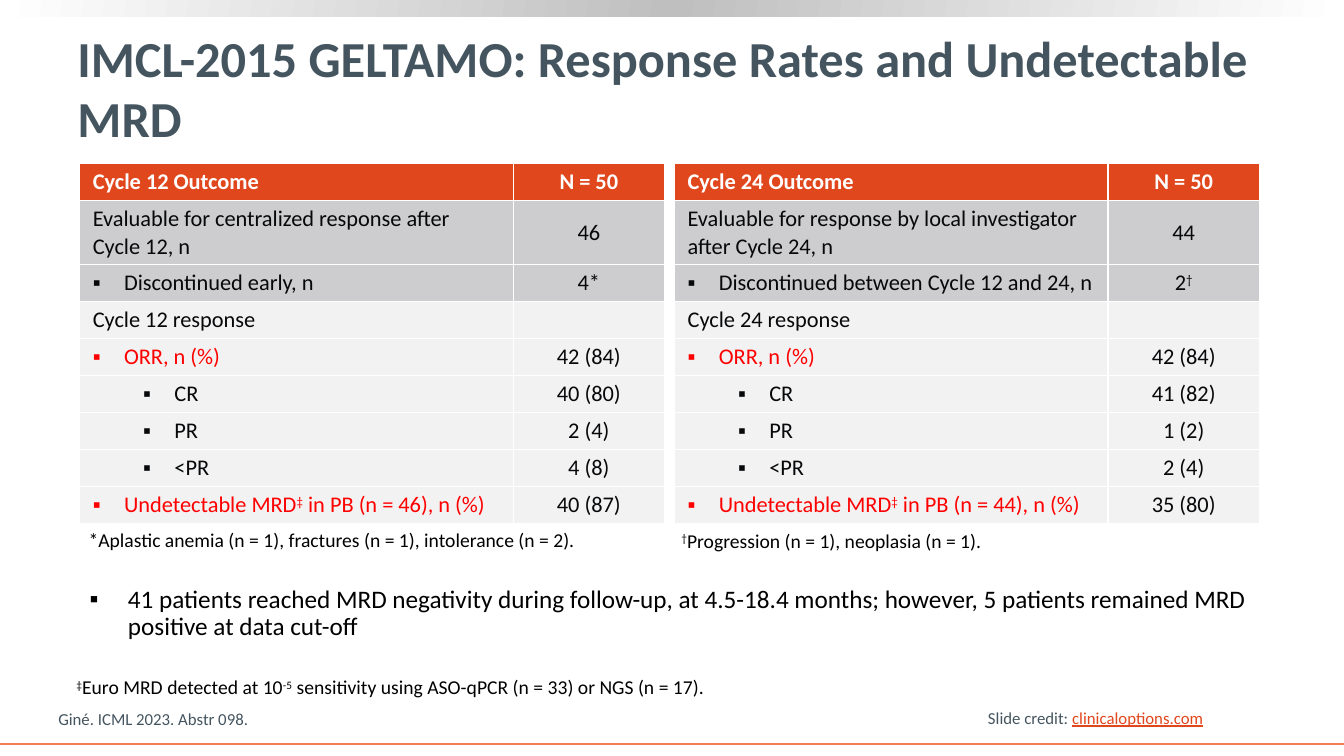
from lxml import etree
from pptx import Presentation, util as u
from pptx.dml import color
from pptx.enum import shapes, text
from pptx.oxml import ns

INK, SLATE, RED, ORANGE = "07080A", "455560", "FF0000", "E1471D"
DARK, LIGHT = "CDCDCF", "F2F2F2"


def rgb(code):
    return color.RGBColor.from_string(code)


def put(item, values):
    for name, value in values.items():
        setattr(item, name, value)


def node(parent, tag, **attrs):
    return etree.SubElement(parent, ns.qn(tag), attrs)


class Deck:
    font = "Calibri"

    def __init__(self, wide, high):
        self.show = Presentation()
        put(self.show, {"slide_width": u.Inches(wide), "slide_height": u.Inches(high)})
        self.page = self.show.slides.add_slide(self.show.slide_layouts[6])
        self.items = self.page.shapes

    def across(self, share):
        return int(self.show.slide_width * share / 100)

    def down(self, share):
        return int(self.show.slide_height * share / 100)

    def area(self, x, y, w, h):
        return self.across(x), self.down(y), self.across(w), self.down(h)

    def fill_in(self, para, words, size, ink, bold=False, line=False):
        for i, part in enumerate(words.split("^")):
            if not part:
                continue
            run = para.add_run()
            run.text = part
            put(run.font, {"name": self.font, "size": u.Pt(size),
                           "bold": bold, "underline": line})
            run.font.color.rgb = rgb(ink)
            if i % 2:
                run.font._element.set("baseline", "30000")

    def bullet(self, para, left, hang):
        props = para._p.get_or_add_pPr()
        props.set("marL", str(u.Inches(left)))
        props.set("indent", str(-u.Inches(hang)))
        node(props, "a:buFont", typeface="Arial")
        node(props, "a:buChar", char="▪")

    def label(self, place, words, size, ink, bold=False, wrap=True,
              anchor=text.MSO_ANCHOR.TOP):
        frame = self.items.add_textbox(*self.area(*place)).text_frame
        put(frame, {"word_wrap": wrap, "vertical_anchor": anchor})
        para = frame.paragraphs[0]
        self.fill_in(para, words, size, ink, bold)
        return para

    def strip(self, place, stops, angle):
        bar = self.items.add_shape(shapes.MSO_SHAPE.RECTANGLE, *self.area(*place))
        bar.shadow.inherit = False
        bar.line.fill.background()
        bar.fill.gradient()
        grad = bar._element.spPr.find(ns.qn("a:gradFill"))
        for child in list(grad):
            grad.remove(child)
        group = node(grad, "a:gsLst")
        for spot, code in stops:
            stop = node(group, "a:gs", pos=str(spot * 1000))
            node(stop, "a:srgbClr", val=code)
        node(grad, "a:lin", ang=str(angle * 60000), scaled="0")

    def rule(self, y, ink, width):
        line = self.items.add_connector(
            shapes.MSO_CONNECTOR.STRAIGHT, 0, self.down(y), self.across(100), self.down(y))
        line.line.color.rgb = rgb(ink)
        line.line.width = u.Pt(width)
        node(line._element.spPr, "a:effectLst")

    def cell(self, cell, words, fill, ink, size=16, bold=False, level=0, mid=False):
        cell.fill.solid()
        cell.fill.fore_color.rgb = rgb(fill)
        put(cell, {"margin_left": u.Inches(0.13), "margin_right": u.Inches(0.13),
                   "margin_top": u.Inches(0.05), "margin_bottom": u.Inches(0.05),
                   "vertical_anchor": text.MSO_ANCHOR.MIDDLE if mid or bold
                   else text.MSO_ANCHOR.TOP})
        para = cell.text_frame.paragraphs[0]
        if mid:
            para.alignment = text.PP_ALIGN.CENTER
        if level:
            self.bullet(para, 0.31 + 0.5 * (level - 1), 0.31)
        if words:
            self.fill_in(para, words, size, ink, bold)
        else:
            node(para._p, "a:endParaRPr", sz=str(size * 100))

    def table(self, x, y, rows, cols, high, tall):
        place = self.area(x, y, sum(cols), high * (len(rows) - 1) + tall)
        grid = self.items.add_table(len(rows), len(cols), *place).table
        put(grid, {"first_row": False, "horz_banding": False})
        for col, share in zip(grid.columns, cols):
            col.width = self.across(share)
        for r, (name, value, level) in enumerate(rows):
            grid.rows[r].height = self.down(tall if r == 1 else high)
            head = r == 0
            fill = ORANGE if head else DARK if r < 3 else LIGHT
            ink = "FFFFFF" if head else INK
            tone = RED if r > 3 and level == 1 else ink
            self.cell(grid.cell(r, 0), name, fill, tone, bold=head, level=level)
            self.cell(grid.cell(r, 1), value, fill, ink, bold=head, mid=True)


def rows(cycle, first, gone, base, counts):
    seen, left, orr, full, part, less, clear = counts
    return [
        (f"Cycle {cycle} Outcome", "N = 50", 0),
        (first, seen, 0),
        (gone, left, 1),
        (f"Cycle {cycle} response", "", 0),
        ("ORR, n (%)", orr, 1),
        ("CR", full, 2),
        ("PR", part, 2),
        ("<PR", less, 2),
        (f"Undetectable MRD^‡^ in PB (n = {base}), n (%)", clear, 1),
    ]


def main():
    deck = Deck(13.33, 7.5)
    deck.strip((0, 0, 100, 2.13), [(0, "FFFFFF"), (50, "BFBFBF"), (100, "FFFFFF")], 190)
    deck.rule(98.4, "F47D55", 1.5)
    deck.label((5.03, 3.47, 89.2, 16.13),
               "IMCL-2015 GELTAMO: Response Rates and Undetectable MRD",
               36, SLATE, bold=True, anchor=text.MSO_ANCHOR.MIDDLE)

    early = rows(12, "Evaluable for centralized response after Cycle 12, n",
                 "Discontinued early, n", 46,
                 ["46", "4*", "42 (84)", "40 (80)", "2 (4)", "4 (8)", "40 (87)"])
    late = rows(24, "Evaluable for response by local investigator after Cycle 24, n",
                "Discontinued between Cycle 12 and 24, n", 44,
                ["44", "2^†^", "42 (84)", "41 (82)", "1 (2)", "2 (4)", "35 (80)"])
    for x, data in ((5.93, early), (50.19, late)):
        deck.table(x, 21.6, data, (32.26, 11.25), 4.89, 8.5)

    for x, y, w, words in (
        (5.85, 69.2, 42.76, "*Aplastic anemia (n = 1), fractures (n = 1), intolerance (n = 2)."),
        (49.96, 69.33, 42.76, "^†^Progression (n = 1), neoplasia (n = 1)."),
        (4.95, 88.67, 53.11, "^‡^Euro MRD detected at 10^-5^ sensitivity using "
                             "ASO-qPCR (n = 33) or NGS (n = 17)."),
    ):
        deck.label((x, y, w, 4.53), words, 14, "000000")

    point = deck.label((5.93, 76.93, 92.95, 11.5),
                       "41 patients reached MRD negativity during follow-up, at 4.5-18.4 "
                       "months; however, 5 patients remained MRD positive at data cut-off",
                       18, "000000")
    put(point, {"line_spacing": 0.9, "space_after": u.Pt(7)})
    deck.bullet(point, 0.38, 0.38)

    deck.label((3.6, 93.07, 65.72, 4), "Giné. ICML 2023. Abstr 098.", 12, SLATE,
               anchor=text.MSO_ANCHOR.BOTTOM)
    credit = deck.label((72.77, 92.93, 17.7, 4), "Slide credit: ", 12, SLATE, wrap=False)
    deck.fill_in(credit, "clinicaloptions.com", 12, ORANGE, line=True)
    deck.show.save("out.pptx")


if __name__ == "__main__":
    main()
